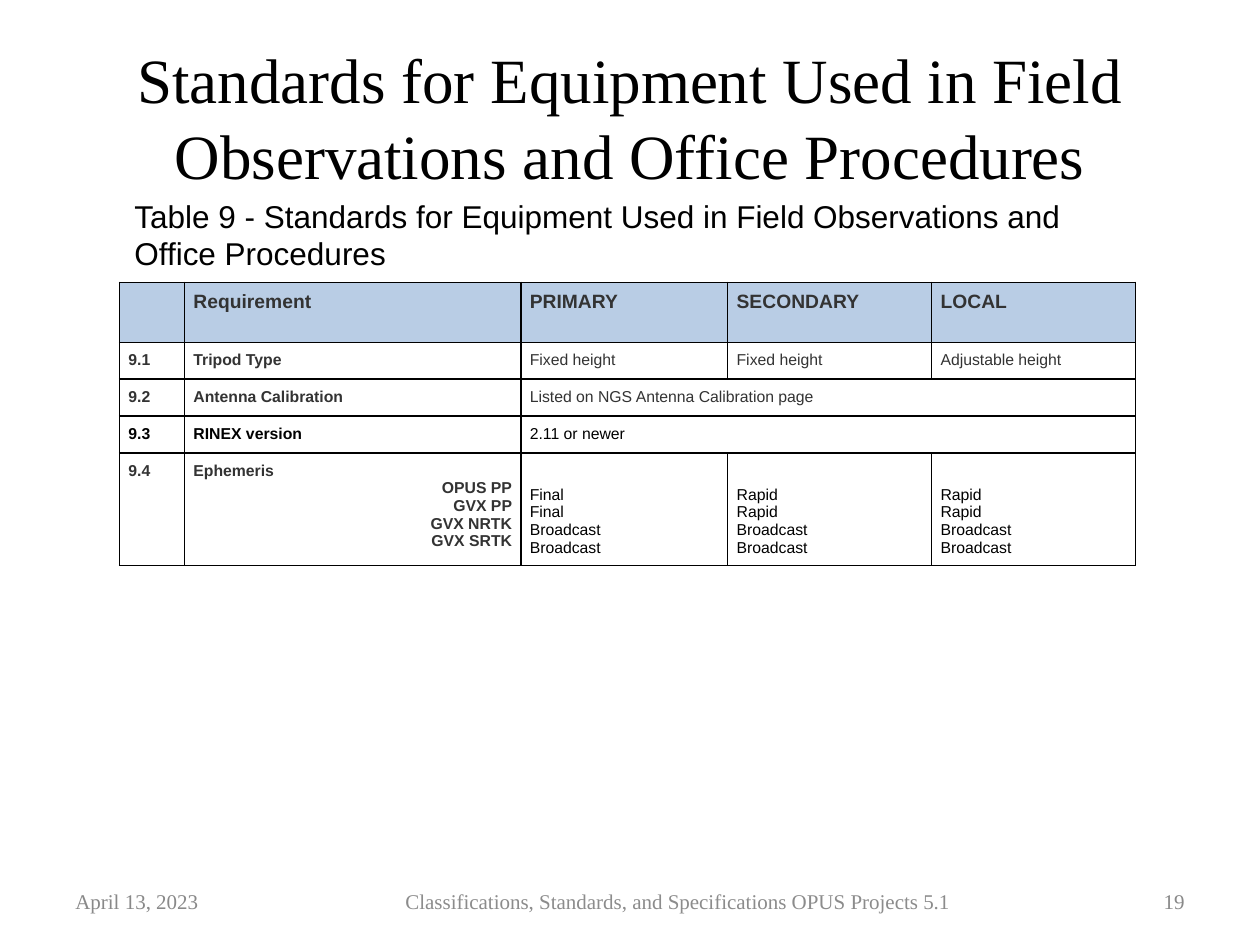
import pptx
import pptx.util
import pptx.dml.color
import pptx.enum.text
import pptx.oxml
import pptx.oxml.ns

Cm, Pt = pptx.util.Cm, pptx.util.Pt
ALIGN = pptx.enum.text.PP_ALIGN
ANCHOR = pptx.enum.text.MSO_ANCHOR
SERIF, SANS = "Times New Roman", "Arial"
BLACK, DARK, GREY = "000000", "333333", "898989"
NAME = "Standards for Equipment Used in Field Observations and Office Procedures"

WIDTHS = [1.31, 6.78, 4.17, 4.11, 4.11]
HEIGHTS = [1.21, 0.71, 0.71, 0.71, 2.14]
ROWS = [
    ["", "Requirement", "PRIMARY", "SECONDARY", "LOCAL"],
    ["9.1", "Tripod Type", "Fixed height", "Fixed height", "Adjustable height"],
    ["9.2", "Antenna Calibration", "Listed on NGS Antenna Calibration page"],
    ["9.3", "RINEX version", "2.11 or newer"],
    ["9.4", "Ephemeris\nOPUS PP\nGVX PP\nGVX NRTK\nGVX SRTK",
     "Final\nFinal\nBroadcast\nBroadcast",
     "Rapid\nRapid\nBroadcast\nBroadcast",
     "Rapid\nRapid\nBroadcast\nBroadcast"],
]


def paint(code):
    return pptx.dml.color.RGBColor.from_string(code)


def style(frame, size, face, color, bold=False, align=ALIGN.LEFT):
    for para in frame.paragraphs:
        para.alignment = align
        for run in para.runs:
            run.font.size = Pt(size)
            run.font.name = face
            run.font.bold = bold
            run.font.color.rgb = paint(color)


def add_title(slide):
    title = slide.shapes.title
    title.left, title.top = Cm(1.27), Cm(0.76)
    title.width, title.height = Cm(22.86), Cm(3.18)
    frame = title.text_frame
    frame.text = NAME
    frame.auto_size = pptx.enum.text.MSO_AUTO_SIZE.NONE
    frame.vertical_anchor = ANCHOR.MIDDLE
    style(frame, 36, SERIF, BLACK, align=ALIGN.CENTER)


def add_text(slide, text, box, size, face, color, align=ALIGN.LEFT,
             anchor=ANCHOR.TOP):
    frame = slide.shapes.add_textbox(*map(Cm, box)).text_frame
    frame.word_wrap = True
    frame.vertical_anchor = anchor
    frame.text = text
    style(frame, size, face, color, align=align)


def add_edges(cell):
    props = cell._tc.get_or_add_tcPr()
    for side in ("lnL", "lnR", "lnT", "lnB"):
        props.append(pptx.oxml.parse_xml(
            f'<a:{side} {pptx.oxml.ns.nsdecls("a")} w="12700"><a:solidFill>'
            f'<a:srgbClr val="{BLACK}"/></a:solidFill></a:{side}>'))


def fill_cell(cell, text, row, col):
    cell.margin_left = cell.margin_right = Cm(0.18)
    cell.margin_top = cell.margin_bottom = Cm(0.18)
    add_edges(cell)
    if row == 0:
        cell.fill.solid()
        cell.fill.fore_color.rgb = paint("B9CDE5")
    else:
        cell.fill.background()
    frame = cell.text_frame
    frame.text = text
    # The RINEX row and the ephemeris values are black
    black = row == 3 or (row == 4 and col > 1)
    style(frame, 11 if row == 0 else 9, SANS, BLACK if black else DARK,
          bold=row == 0 or col < 2)
    # Methods sit at the right, below the row's name
    for para in frame.paragraphs[1:]:
        para.alignment = ALIGN.RIGHT if col == 1 else ALIGN.LEFT
    # Values line up with the methods
    if row == 4 and col > 1:
        cell.vertical_anchor = ANCHOR.BOTTOM


def add_grid(slide):
    grid = slide.shapes.add_table(
        len(ROWS), len(WIDTHS), Cm(2.41), Cm(5.69),
        Cm(sum(WIDTHS)), Cm(sum(HEIGHTS))).table
    grid.first_row = grid.horz_banding = False
    for col, width in zip(grid.columns, WIDTHS):
        col.width = Cm(width)
    for row, height in zip(grid.rows, HEIGHTS):
        row.height = Cm(height)
    for r, texts in enumerate(ROWS):
        # A short row spans its last value to the right edge
        if len(texts) < len(WIDTHS):
            grid.cell(r, len(texts) - 1).merge(grid.cell(r, len(WIDTHS) - 1))
        for c in range(len(WIDTHS)):
            fill_cell(grid.cell(r, c), texts[c] if c < len(texts) else "", r, c)


def main():
    deck = pptx.Presentation()
    deck.slide_width, deck.slide_height = Cm(25.4), Cm(19.05)
    slide = deck.slides.add_slide(deck.slide_layouts[5])
    add_title(slide)

    # Footer: date, name, page
    for text, left, width, color, align in [
        ("April 13, 2023", 1.27, 3.56, GREY, ALIGN.LEFT),
        ("Classifications, Standards, and Specifications OPUS Projects 5.1",
         5.87, 15.6, "8C8C8C", ALIGN.CENTER),
        ("19", 22.12, 2.01, GREY, ALIGN.RIGHT),
    ]:
        add_text(slide, text, (left, 17.65, width, 1.02), 12, SERIF, color,
                 align, ANCHOR.MIDDLE)

    # Table and its caption
    add_grid(slide)
    add_text(slide, "Table 9 - " + NAME, (2.46, 3.84, 20.5, 1.8), 18, SANS, BLACK)
    deck.save("out.pptx")


if __name__ == "__main__":
    main()
